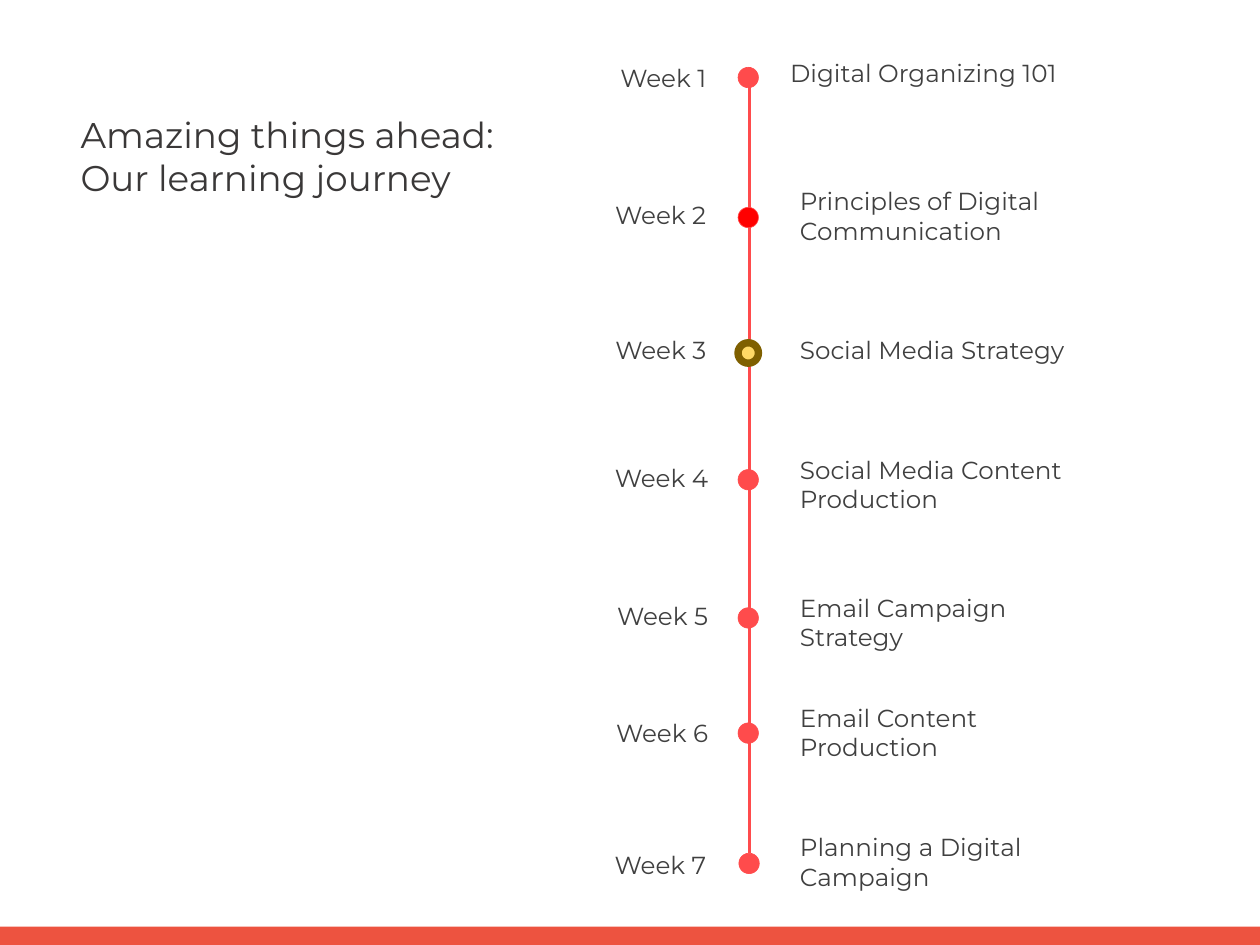
from dataclasses import dataclass

from lxml.etree import SubElement
from pptx import Presentation
from pptx.dml.color import RGBColor
from pptx.enum.shapes import MSO_CONNECTOR as Link, MSO_SHAPE as Form
from pptx.enum.text import MSO_ANCHOR as Anchor, PP_ALIGN as Align
from pptx.oxml.ns import qn
from pptx.util import Pt

FONT = "Montserrat"
WHITE = RGBColor(0xFF, 0xFF, 0xFF)
ORANGE = RGBColor(0xED, 0x53, 0x40)
CORAL = RGBColor(0xFF, 0x4B, 0x4C)
RED = RGBColor(0xFF, 0x00, 0x00)
GOLD = RGBColor(0xFF, 0xD9, 0x66)
BROWN = RGBColor(0x7F, 0x60, 0x00)
DARK = RGBColor(0x3A, 0x38, 0x38)
GREY = RGBColor(0x40, 0x40, 0x40)

WIDE, HIGH = 1024, 768
BAR_TOP = 753
DOT = 16.6
ROW_HIGH = 55.4
WEEK_WIDE, TOPIC_WIDE = 196.6, 263.5


@dataclass
class Week:
    topic: str
    dot_top: float
    week_top: float
    topic_top: float
    week_left: float = 384.5
    topic_left: float = 643
    dot_left: float = 599.8
    fill: RGBColor = CORAL
    edge: RGBColor = CORAL
    edge_wide: float = 0.5


WEEKS = [
    Week("Digital Organizing 101", 54.7, 35.3, 31.7, topic_left=635),
    Week("Principles of Digital Communication", 168.5, 146.9, 147.6, fill=RED),
    Week("Social Media Strategy", 278.6, 256.3, 256.3,
         fill=GOLD, edge=BROWN, edge_wide=6),
    Week("Social Media Content Production", 381.6, 360.7, 365.8, week_left=386),
    Week("Email Campaign Strategy", 493.9, 472.3, 478.1, week_left=386),
    Week("Email Content Production", 587.5, 567.4, 567.4, week_left=386),
    Week("Planning a Digital Campaign", 693.4, 675.4, 672.5, dot_left=600.5),
]


def add_text(slide, lines: list[str], left: float, top: float, wide: float,
             high: float, size: float, color: RGBColor, pad: tuple[float, float],
             anchor: Anchor = Anchor.MIDDLE, align: Align = Align.LEFT) -> None:
    box = slide.shapes.add_textbox(Pt(left), Pt(top), Pt(wide), Pt(high))
    frame = box.text_frame
    frame.word_wrap = True
    frame.vertical_anchor = anchor
    frame.margin_left = frame.margin_right = Pt(pad[0])
    frame.margin_top = frame.margin_bottom = Pt(pad[1])
    for i, line in enumerate(lines):
        para = frame.add_paragraph() if i else frame.paragraphs[0]
        para.alignment = align
        run = para.add_run()
        run.text = line
        run.font.name = FONT
        run.font.size = Pt(size)
        run.font.color.rgb = color


def add_form(slide, form: Form, left: float, top: float, wide: float,
             high: float, fill: RGBColor):
    shape = slide.shapes.add_shape(form, Pt(left), Pt(top), Pt(wide), Pt(high))
    shape.shadow.inherit = False
    shape.fill.solid()
    shape.fill.fore_color.rgb = fill
    shape.line.fill.background()
    return shape


def add_stem(slide, x: float, top: float, end: float) -> None:
    stem = slide.shapes.add_connector(Link.STRAIGHT, Pt(x), Pt(top), Pt(x), Pt(end))
    stem.line.color.rgb = CORAL
    stem.line.width = Pt(3)
    SubElement(stem._element.spPr, qn("a:effectLst"))


def add_week(slide, number: int, week: Week) -> None:
    dot = add_form(slide, Form.OVAL, week.dot_left, week.dot_top, DOT, DOT, week.fill)
    dot.line.color.rgb = week.edge
    dot.line.width = Pt(week.edge_wide)
    pad = (7.2, 3.6)
    add_text(slide, [f"Week {number}"], week.week_left, week.week_top, WEEK_WIDE,
             ROW_HIGH, 20, GREY, pad, align=Align.RIGHT)
    add_text(slide, [week.topic], week.topic_left, week.topic_top, TOPIC_WIDE,
             ROW_HIGH, 20, GREY, pad)


def main() -> None:
    deck = Presentation()
    deck.slide_width, deck.slide_height = Pt(WIDE), Pt(HIGH)
    slide = deck.slides.add_slide(deck.slide_layouts[6])
    slide.background.fill.solid()
    slide.background.fill.fore_color.rgb = WHITE

    # Footer bar and title
    add_form(slide, Form.RECTANGLE, 0, BAR_TOP, WIDE, HIGH - BAR_TOP, ORANGE)
    add_text(slide, ["Amazing things ahead:", "Our learning journey"],
             60.5, 89.3, 365, 74.9, 29, DARK, (5, 2.2), Anchor.TOP)

    # Timeline from the first dot to the last
    add_stem(slide, 609.1, WEEKS[0].dot_top, WEEKS[-1].dot_top)
    for number, week in enumerate(WEEKS, 1):
        add_week(slide, number, week)

    deck.save("out.pptx")


if __name__ == "__main__":
    main()
